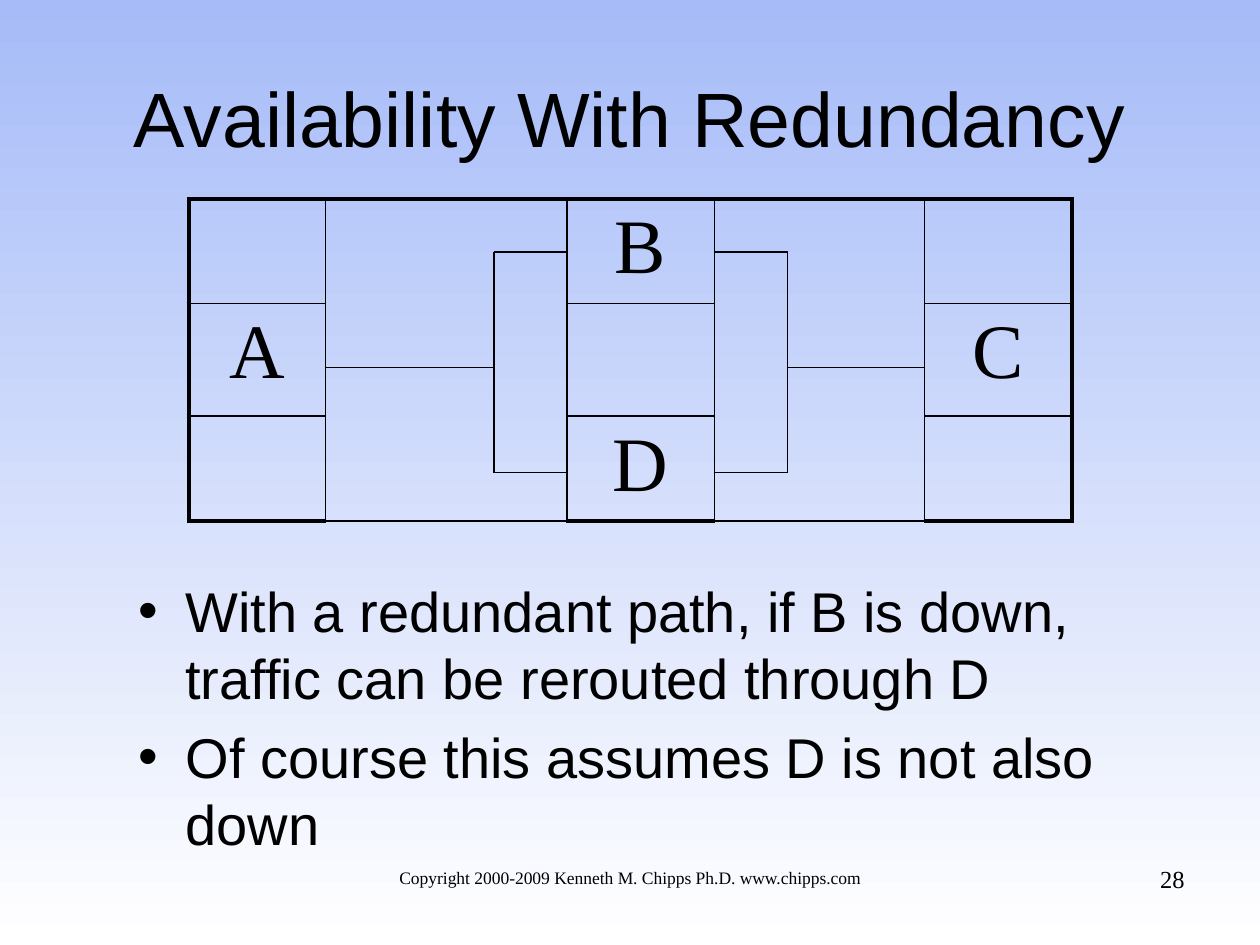
from typing import NamedTuple

from lxml import etree
from pptx import Presentation
from pptx.dml.color import RGBColor
from pptx.enum.shapes import MSO_CONNECTOR
from pptx.enum.text import MSO_ANCHOR, PP_ALIGN
from pptx.oxml.ns import qn
from pptx.util import Cm, Pt

LEFT, MID, RIGHT = PP_ALIGN.LEFT, PP_ALIGN.CENTER, PP_ALIGN.RIGHT
TOP, CENTRE = MSO_ANCHOR.TOP, MSO_ANCHOR.MIDDLE
STRAIGHT = MSO_CONNECTOR.STRAIGHT

BLACK = RGBColor(0x00, 0x00, 0x00)
SKY = RGBColor(0xA6, 0xBB, 0xF8)
WHITE = RGBColor(0xFF, 0xFF, 0xFF)
SANS, SERIF = "Arial", "Times New Roman"
THIN, THICK = Pt(1), Pt(2.25)


class Text(NamedTuple):
    left: float
    top: float
    width: float
    height: float
    lines: list[str]
    size: float
    font: str
    align: PP_ALIGN
    anchor: MSO_ANCHOR = TOP
    bullet: bool = False


class Wire(NamedTuple):
    x1: float
    y1: float
    x2: float
    y2: float


TEXTS = [
    Text(1.27, 0.76, 22.86, 3.18, ["Availability With Redundancy"],
         44, SANS, MID, CENTRE),
    Text(7.62, 17.35, 10.16, 1.32,
         ["Copyright 2000-2009 Kenneth M. Chipps Ph.D. www.chipps.com"],
         10, SERIF, MID),
    Text(18.2, 17.3, 5.93, 1.32, ["28"], 14, SERIF, RIGHT),
    Text(2.54, 11.5, 21.59, 5.9,
         ["With a redundant path, if B is down, traffic can be rerouted through D",
          "Of course this assumes D is not also down"],
         32, SANS, LEFT, bullet=True),
]

GRID_X, GRID_Y = 3.81, 4.01
COLS = [2.75, 4.87, 2.97, 4.24, 2.97]
ROWS = [2.11, 2.27, 2.11]
NODES = {(1, 0): "A", (0, 2): "B", (1, 4): "C", (2, 2): "D"}
GAPS = [1, 3]

# Each side: outer node edge, upright wire, inner node edge
SIDES = [(6.56, 9.96, 11.43), (18.63, 15.88, 14.4)]
UPPER, TRUNK, LOWER = 5.08, 7.41, 9.53


def style(para, size: float, font: str, align: PP_ALIGN) -> None:
    para.alignment = align
    look = {"size": Pt(size), "name": font, "bold": False}
    for key, value in look.items():
        setattr(para.font, key, value)
    para.font.color.rgb = BLACK


def hang(para, size: float) -> None:
    """Give the paragraph a hanging bullet and open line spacing."""
    props = para._p.get_or_add_pPr()
    props.set("marL", str(Cm(0.95)))
    props.set("indent", str(-Cm(0.95)))
    etree.SubElement(props, qn("a:buFont"), typeface=SANS)
    etree.SubElement(props, qn("a:buChar"), char="•")
    para.line_spacing = Pt(1.2 * size)


def write(slide, item: Text) -> None:
    box = slide.shapes.add_textbox(*map(Cm, item[:4]))
    frame = box.text_frame
    form = {"word_wrap": True, "vertical_anchor": item.anchor}
    for key, value in form.items():
        setattr(frame, key, value)
    for i, line in enumerate(item.lines):
        para = frame.add_paragraph() if i else frame.paragraphs[0]
        para.text = line
        if item.bullet:
            hang(para, item.size)
        if i:
            para.space_before = Pt(0.2 * item.size)
        style(para, item.size, item.font, item.align)


def edge(cell, row: int, col: int) -> None:
    """Draw thick lines on the rim of the grid and thin ones inside."""
    rim = {"L": col == 0, "R": col == len(COLS) - 1,
           "T": row == 0, "B": row == len(ROWS) - 1}
    props = cell._tc.get_or_add_tcPr()
    for side, thick in rim.items():
        line = etree.SubElement(props, qn(f"a:ln{side}"),
                                w=str(THICK if thick else THIN))
        fill = etree.SubElement(line, qn("a:solidFill"))
        etree.SubElement(fill, qn("a:srgbClr"), val=str(BLACK))


def draw_grid(slide) -> None:
    frame = slide.shapes.add_table(len(ROWS), len(COLS), Cm(GRID_X), Cm(GRID_Y),
                                   Cm(sum(COLS)), Cm(sum(ROWS)))
    table = frame.table
    table.first_row = table.horz_banding = False
    for col, width in zip(table.columns, COLS):
        col.width = Cm(width)
    for r, height in enumerate(ROWS):
        table.rows[r].height = Cm(height)
        for c in range(len(COLS)):
            cell = table.cell(r, c)
            edge(cell, r, c)
            cell.fill.background()
            if (r, c) in NODES:
                cell.text = NODES[r, c]
                style(cell.text_frame.paragraphs[0], 44, SERIF, MID)
    for c in GAPS:
        table.cell(0, c).merge(table.cell(len(ROWS) - 1, c))


def link(slide, wire: Wire) -> None:
    line = slide.shapes.add_connector(STRAIGHT, *map(Cm, wire))
    line.line.color.rgb = BLACK
    line.line.width = Pt(0.75)
    etree.SubElement(line._element.spPr, qn("a:effectLst"))


def paint(slide) -> None:
    """Shade the background from sky at the top to white."""
    fill = slide.background.fill
    fill.gradient()
    fill.gradient_angle = 270
    for stop, color, place in zip(fill.gradient_stops, (SKY, WHITE), (0, 1)):
        stop.color.rgb = color
        stop.position = place


def main() -> None:
    deck = Presentation()
    deck.slide_width, deck.slide_height = Cm(25.4), Cm(19.05)
    slide = deck.slides.add_slide(deck.slide_layouts[6])
    paint(slide)
    draw_grid(slide)
    for item in TEXTS:
        write(slide, item)
    for outer, post, inner in SIDES:
        link(slide, Wire(post, UPPER, post, LOWER))
        link(slide, Wire(outer, TRUNK, post, TRUNK))
        for y in (UPPER, LOWER):
            link(slide, Wire(post, y, inner, y))
    deck.save("out.pptx")


if __name__ == "__main__":
    main()
